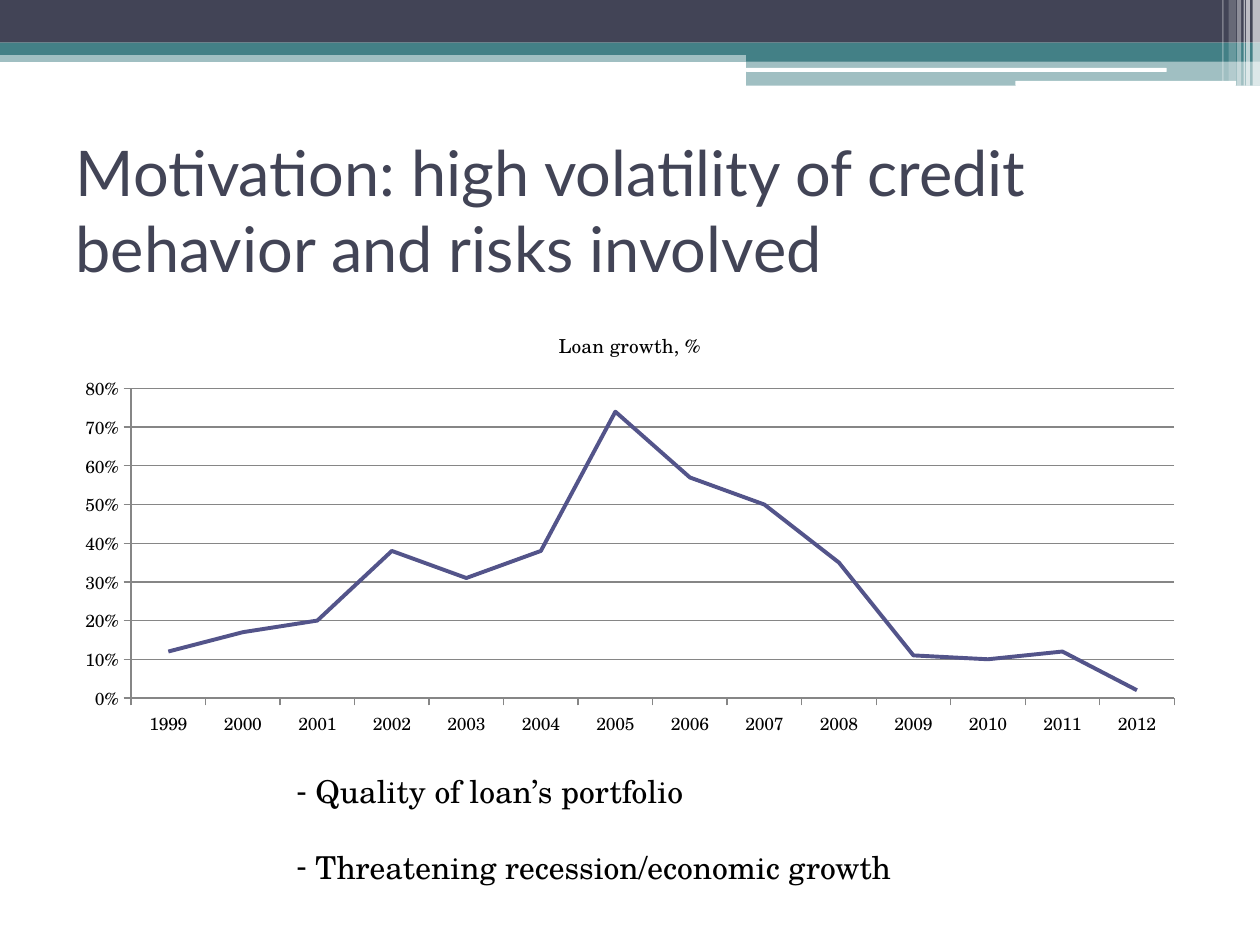
import pptx
import pptx.chart.data
import pptx.dml.color
import pptx.enum.chart
import pptx.enum.shapes
import pptx.enum.text
import pptx.oxml
import pptx.oxml.ns
import pptx.util
from lxml import etree

Cm, Pt = pptx.util.Cm, pptx.util.Pt
qn = pptx.oxml.ns.qn
NAVY, TEAL, WHITE, BLACK = "424456", "438086", "FFFFFF", "000000"
GREY, VIOLET = "868686", "53548A"
SANS, SERIF = "Lato", "TeX Gyre Schola"


def color(hex_code):
    return pptx.dml.color.RGBColor.from_string(hex_code)


def set_font(font, name, size, hex_code):
    font.name, font.size, font.bold = name, Pt(size), False
    font.color.rgb = color(hex_code)


def place(sp, box):
    sp.left, sp.top, sp.width, sp.height = (Cm(v) for v in box)


def add_band(s, box, hex_code, opacity=100, rounded=False):
    kinds = pptx.enum.shapes.MSO_SHAPE
    kind = kinds.ROUNDED_RECTANGLE if rounded else kinds.RECTANGLE
    sp = s.shapes.add_shape(kind, *(Cm(v) for v in box))
    sp.shadow.inherit = False
    sp.line.fill.background()
    sp.fill.solid()
    sp.fill.fore_color.rgb = color(hex_code)
    if opacity < 100:
        clr = next(sp.fill._xPr.iter(qn("a:srgbClr")))
        etree.SubElement(clr, qn("a:alpha"), val=str(opacity * 1000))


def add_header(s, box):
    x, y, w, h = box
    step = x + 15.04
    right = x + w
    add_band(s, (x, y + 1.02, w, 0.23), TEAL, 50)
    add_band(s, (x, y, w, 0.86), NAVY)
    add_band(s, (x, y + 0.86, w, 0.25), TEAL)
    add_band(s, (step, y + 0.99, right - step, 0.25), TEAL)
    add_band(s, (step, y + 1.22, right - step, 0.51), TEAL, 50)
    add_band(s, (step, y + 1.37, 8.48, 0.08), WHITE, rounded=True)
    add_band(s, (x + 20.47, y + 1.63, 4.45, 0.1), WHITE, rounded=True)
    # Stripes: distance from the right edge, width, height, opacity
    for offset, width, height, opacity in [
        (0.15, 0.15, h, 65), (0.28, 0.08, h, 65), (0.33, 0.03, h, 60),
        (0.46, 0.08, h, 40), (0.63, 0.15, h - 0.1, 20), (0.76, 0.03, h - 0.1, 30),
    ]:
        add_band(s, (right - offset, y, width, height), WHITE, opacity)


def add_title(s, box):
    sp = s.shapes.title
    place(sp, box)
    tf = sp.text_frame
    tf.text = "Motivation: high volatility of credit behavior and risks involved"
    tf.vertical_anchor = pptx.enum.text.MSO_ANCHOR.MIDDLE
    p = tf.paragraphs[0]
    p.alignment = pptx.enum.text.PP_ALIGN.LEFT
    set_font(p.font, SANS, 36, NAVY)


def set_plot_layout(chart, x, y, w, h):
    """Fix the inner plot area, in fractions of the chart."""
    plot_area = chart._chartSpace.chart.plotArea
    for old in plot_area.findall(qn("c:layout")):
        plot_area.remove(old)
    layout = etree.Element(qn("c:layout"))
    manual = etree.SubElement(layout, qn("c:manualLayout"))
    for tag, val in [("layoutTarget", "inner"), ("xMode", "edge"), ("yMode", "edge"),
                     ("x", x), ("y", y), ("w", w), ("h", h)]:
        etree.SubElement(manual, qn(f"c:{tag}"), val=str(val))
    plot_area.insert(0, layout)


def add_loan_chart(s, box):
    enums = pptx.enum.chart
    name = "Loan growth, %"
    data = pptx.chart.data.CategoryChartData(number_format="0%")
    data.categories = [str(year) for year in range(1999, 2013)]
    data.add_series(name, [0.12, 0.17, 0.2, 0.38, 0.31, 0.38, 0.74,
                           0.57, 0.5, 0.35, 0.11, 0.1, 0.12, 0.02])
    chart = s.shapes.add_chart(
        enums.XL_CHART_TYPE.LINE, *(Cm(v) for v in box), data).chart
    set_font(chart.font, SERIF, 10, BLACK)
    chart.has_legend = False
    chart.has_title = True
    chart.chart_title.include_in_layout = False
    p = chart.chart_title.text_frame.paragraphs[0]
    p.text = name
    set_font(p.font, SERIF, 11, BLACK)
    set_plot_layout(chart, 0.06, 0.18, 0.92, 0.71)

    chart.plots[0].vary_by_categories = False
    series = chart.plots[0].series[0]
    series.smooth = False
    series.marker.style = enums.XL_MARKER_STYLE.NONE
    series.format.line.color.rgb = color(VIOLET)
    series.format.line.width = Pt(2.25)

    val_axis = chart.value_axis
    val_axis.minimum_scale, val_axis.maximum_scale = 0, 0.8
    val_axis.major_unit = 0.1
    val_axis.tick_labels.number_format = "0%"
    val_axis.tick_labels.number_format_is_linked = False
    val_axis.has_major_gridlines = True
    for axis in (chart.category_axis, val_axis):
        axis.major_tick_mark = enums.XL_TICK_MARK.OUTSIDE
        axis.format.line.color.rgb = color(GREY)
    val_axis.major_gridlines.format.line.color.rgb = color(GREY)


def add_concerns(s, box):
    sp = s.placeholders[1]
    place(sp, box)
    tf = sp.text_frame
    tf.auto_size = pptx.enum.text.MSO_AUTO_SIZE.NONE
    tf.text = " Quality of loan’s portfolio\n Threatening recession/economic growth"
    for p, gap in zip(tf.paragraphs, (0, 21.5)):
        p.space_before = Pt(gap)
        set_font(p.font, SERIF, 18, BLACK)
        p_pr = p._p.get_or_add_pPr()
        p_pr.set("marL", "0")
        p_pr.set("indent", "0")
        bullet = etree.Element(qn("a:buChar"), char="-")
        p_pr.find(qn("a:defRPr")).addprevious(bullet)


def main():
    prs = pptx.Presentation()
    prs.slide_width, prs.slide_height = Cm(25.4), Cm(19.05)
    s = prs.slides.add_slide(prs.slide_layouts[1])
    add_header(s, (0, 0, 25.4, 1.73))
    add_title(s, (1.27, 2.74, 22.86, 2.97))
    add_loan_chart(s, (1.27, 6.25, 22.86, 8.79))
    add_concerns(s, (5.72, 15.44, 12.52, 2.57))
    prs.save("out.pptx")


if __name__ == "__main__":
    main()
